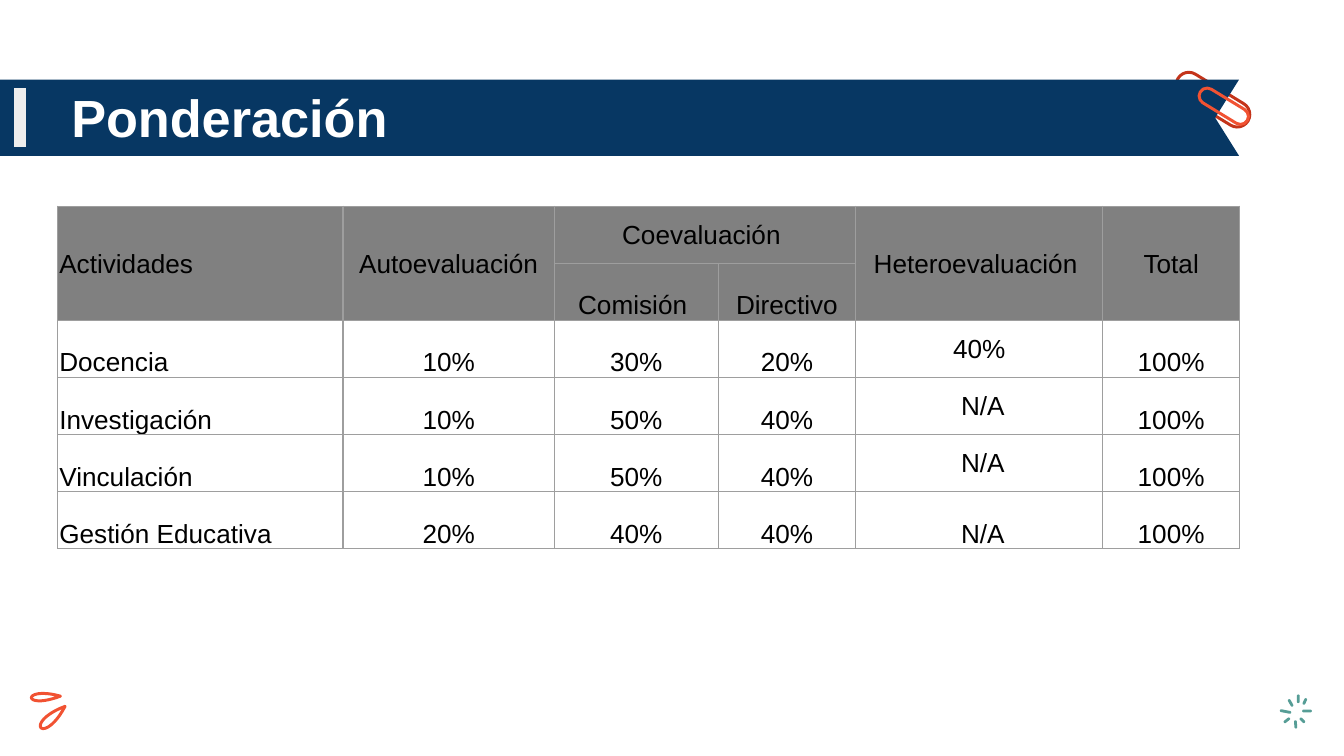
from dataclasses import dataclass
from typing import Optional

from lxml.etree import SubElement
from pptx import Presentation
from pptx.dml.color import RGBColor
from pptx.enum.shapes import MSO_SHAPE
from pptx.enum.text import MSO_ANCHOR, PP_ALIGN
from pptx.oxml.ns import qn
from pptx.util import Pt

COLORS = {"navy": "073763", "light": "EEEEEE", "red": "C4341A", "orange": "F15232",
          "teal": "569D96", "white": "FFFFFF", "black": "000000",
          "header": "808080", "border": "9E9E9E"}
FONT = "Arial"
STROKE = 1.6


@dataclass
class Capsule:
    cx: float
    cy: float
    length: float
    thickness: float
    angle: float
    fill: Optional[str] = None
    line: Optional[str] = None


@dataclass
class Leaf:
    """A closed cubic loop that starts and ends at its tip."""
    tip: tuple
    control1: tuple
    control2: tuple


BACK_CLIP = Capsule(649.8, 53.4, 43.9, 13.5, 31.4, line="red")
FRONT_CLIP = Capsule(655.6, 56.9, 29.5, 8.6, 31.4, line="orange")
RAYS = [Capsule(cx, cy, length, 1.5, angle, fill="teal") for cx, cy, length, angle in [
    (695.5, 374.4, 4.6, 90), (691.4, 376.6, 4.4, 60), (688.7, 381.2, 6.2, 11),
    (689.4, 385.9, 4, -38), (694.1, 388.1, 4.4, 85), (697.7, 385.9, 3.6, 45),
    (700.2, 380.9, 5.2, 0), (699, 375.8, 3.7, -65)]]
LEAVES = [Leaf((34.9, 378.4), (11.9, 387.2), (23.4, 400.2)),
          Leaf((32.4, 373), (11.7, 367.2), (11.7, 380.9))]

COL_WIDTHS = [152.8, 113.2, 87.8, 73.7, 132.3, 73.4]
ROW_HEIGHT = 30.6
ROWS = [
    ["Actividades", "Autoevaluación", "Coevaluación ", "", "Heteroevaluación ", "Total"],
    ["", "", "Comisión ", "Directivo", "", ""],
    ["Docencia", "10%", "30%", "20%", "40%", "100%"],
    ["Investigación", "10%", "50%", "40%", " N/A", "100%"],
    ["Vinculación", "10%", "50%", "40%", " N/A", "100%"],
    ["Gestión Educativa", "20%", "40%", "40%", " N/A", "100%"],
]
HEADER_ROWS = 2
HETERO_COL = 4


def rgb(name: str) -> RGBColor:
    return RGBColor.from_string(COLORS[name])


def paint(shape, fill: Optional[str] = None, line: Optional[str] = None) -> None:
    shape.shadow.inherit = False
    if fill:
        shape.fill.solid()
        shape.fill.fore_color.rgb = rgb(fill)
    else:
        shape.fill.background()
    if line:
        shape.line.color.rgb = rgb(line)
        shape.line.width = Pt(STROKE)
    else:
        shape.line.fill.background()


def draw_capsule(s, c: Capsule) -> None:
    sp = s.shapes.add_shape(MSO_SHAPE.ROUNDED_RECTANGLE, Pt(c.cx - c.length / 2),
                            Pt(c.cy - c.thickness / 2), Pt(c.length), Pt(c.thickness))
    sp.adjustments[0] = 0.5
    sp.rotation = c.angle
    paint(sp, c.fill, c.line)


def draw_polygon(s, points: list, fill: Optional[str] = None,
                 line: Optional[str] = None) -> None:
    pts = [(Pt(x), Pt(y)) for x, y in points]
    builder = s.shapes.build_freeform(*pts[0])
    builder.add_line_segments(pts[1:], close=True)
    paint(builder.convert_to_shape(), fill, line)


def draw_leaf(s, leaf: Leaf, steps: int = 24) -> None:
    def at(t: float) -> tuple:
        u = 1 - t
        return tuple((u**3 + t**3) * p + 3 * u * u * t * a + 3 * u * t * t * b
                     for p, a, b in zip(leaf.tip, leaf.control1, leaf.control2))
    draw_polygon(s, [at(i / steps) for i in range(steps)], line="orange")


def set_borders(cell) -> None:
    tcPr = cell._tc.get_or_add_tcPr()
    for side in ("a:lnL", "a:lnR", "a:lnT", "a:lnB"):
        ln = SubElement(tcPr, qn(side), w=str(Pt(0.75)))
        SubElement(SubElement(ln, qn("a:solidFill")), qn("a:srgbClr"), val=COLORS["border"])


def anchor_for(row: int, col: int):
    hetero = col == HETERO_COL and row < len(ROWS) - 1
    return MSO_ANCHOR.MIDDLE if row == 0 or hetero else MSO_ANCHOR.BOTTOM


def draw_table(s) -> None:
    frame = s.shapes.add_table(len(ROWS), len(COL_WIDTHS), Pt(31), Pt(110.5),
                               Pt(sum(COL_WIDTHS)), Pt(ROW_HEIGHT * len(ROWS)))
    table = frame.table
    table.first_row = table.horz_banding = False
    for column, width in zip(table.columns, COL_WIDTHS):
        column.width = Pt(width)
    for i, texts in enumerate(ROWS):
        table.rows[i].height = Pt(ROW_HEIGHT)
        for j, text in enumerate(texts):
            cell = table.cell(i, j)
            set_borders(cell)
            if i < HEADER_ROWS:
                cell.fill.solid()
                cell.fill.fore_color.rgb = rgb("header")
            else:
                cell.fill.background()
            cell.margin_left = cell.margin_right = cell.margin_top = Pt(0.75)
            cell.margin_bottom = 0
            cell.vertical_anchor = anchor_for(i, j)
            p = cell.text_frame.paragraphs[0]
            p.text = text
            p.alignment = PP_ALIGN.CENTER if j else PP_ALIGN.LEFT
            p.font.size = Pt(14)
            for r in p.runs:
                r.font.name, r.font.size = FONT, Pt(14)
                r.font.color.rgb = rgb("black")
    # Header spans: two rows everywhere except over the two Coevaluación columns
    for j in (0, 1, 4, 5):
        table.cell(0, j).merge(table.cell(1, j))
    table.cell(0, 2).merge(table.cell(0, 3))


def set_title(s) -> None:
    title = s.shapes.title
    title.left, title.top, title.width, title.height = Pt(31), Pt(44), Pt(633), Pt(37.5)
    s.shapes._spTree.append(title._element)  # bring in front of the ribbon
    tf = title.text_frame
    tf.text = "Ponderación"
    tf.word_wrap = True
    tf.vertical_anchor = MSO_ANCHOR.MIDDLE
    tf.margin_left = tf.margin_right = tf.margin_top = tf.margin_bottom = Pt(7.2)
    p = tf.paragraphs[0]
    p.alignment = PP_ALIGN.LEFT
    r = p.runs[0]
    r.font.name, r.font.size, r.font.bold = FONT, Pt(28), True
    r.font.color.rgb = rgb("white")


def main() -> None:
    prs = Presentation()
    prs.slide_width, prs.slide_height = Pt(720), Pt(405)
    s = prs.slides.add_slide(prs.slide_layouts[5])

    # Ribbon held by two paper clips
    draw_capsule(s, BACK_CLIP)
    draw_polygon(s, [(0, 42.6), (0, 83.5), (663.8, 83.5), (651, 63.1), (663.8, 42.6)],
                 fill="navy")
    draw_polygon(s, [(7.6, 47.2), (7.6, 78.8), (13.9, 78.8), (13.9, 47.2)], fill="light")
    draw_capsule(s, FRONT_CLIP)

    # Corner ornaments
    for ray in RAYS:
        draw_capsule(s, ray)
    for leaf in LEAVES:
        draw_leaf(s, leaf)

    # Title and weighting table
    set_title(s)
    draw_table(s)
    prs.save("out.pptx")


if __name__ == "__main__":
    main()
